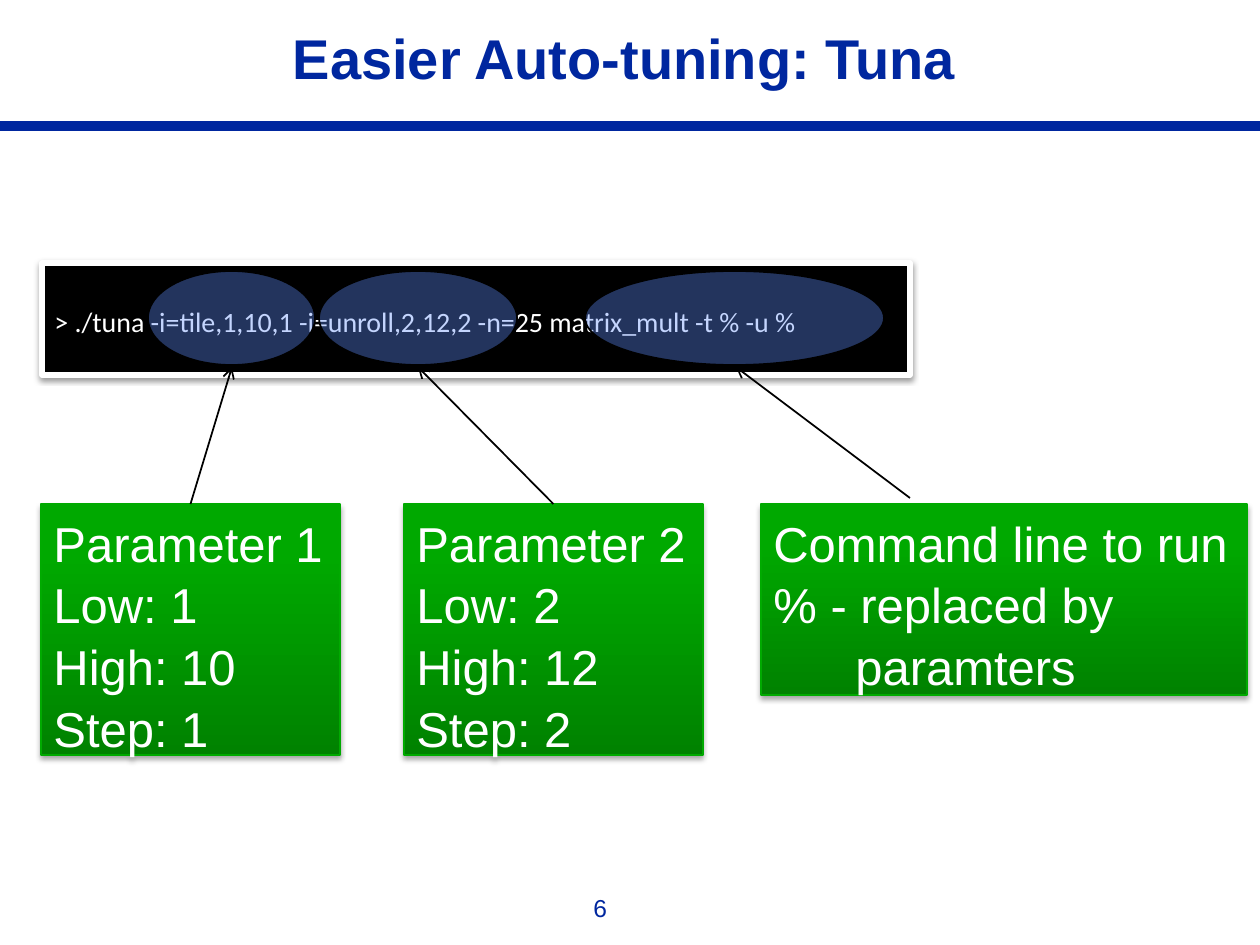
from lxml.etree import SubElement
from pptx import Presentation
from pptx.dml.color import RGBColor
from pptx.enum.shapes import MSO_CONNECTOR as Link, MSO_SHAPE as Shape
from pptx.enum.text import MSO_ANCHOR as Anchor, PP_ALIGN as Align
from pptx.oxml.ns import qn
from pptx.util import Emu, Pt


def px(length):
    return Emu(round(length * 914400 / 126))


def color(code):
    return RGBColor.from_string(code)


class TunaSlide:
    navy, black, white = "00279F", "000000", "FFFFFF"
    green_dark, green, green_edge = "008200", "00A900", "00AA00"
    highlight = "618FFD"
    sans, code_font = "Arial", "Calibri"

    def __init__(self, deck):
        self.slide = deck.slides.add_slide(deck.slide_layouts[5])
        self.shapes = self.slide.shapes

    def set_text(self, frame, lines, size, font, code, bold=False, spacing=1.0, align=Align.LEFT):
        frame.text = "\n".join(lines)
        for paragraph in frame.paragraphs:
            paragraph.alignment = align
            paragraph.line_spacing = spacing
            for run in paragraph.runs:
                run.font.size = Pt(size)
                run.font.name = font
                run.font.bold = bold
                run.font.color.rgb = color(code)

    def outline(self, shape, code, width):
        shape.line.color.rgb = color(code)
        shape.line.width = Pt(width)

    def cast_shadow(self, shape, alpha, distance):
        effects = shape.element.spPr.find(qn("a:effectLst"))
        outer = SubElement(effects, qn("a:outerShdw"), blurRad=str(Pt(3.1)),
                           dist=str(Pt(distance)), dir="5400000", rotWithShape="0")
        shade = SubElement(outer, qn("a:srgbClr"), val=self.black)
        SubElement(shade, qn("a:alpha"), val=str(alpha * 1000))

    def add_block(self, kind, left, top, width, height):
        block = self.shapes.add_shape(kind, px(left), px(top), px(width), px(height))
        block.shadow.inherit = False
        return block

    def title(self, text, left, top, width, height):
        heading = self.shapes.title
        heading.left, heading.top = px(left), px(top)
        heading.width, heading.height = px(width), px(height)
        heading.text_frame.vertical_anchor = Anchor.MIDDLE
        self.set_text(heading.text_frame, [text], 32, self.sans, self.navy,
                      bold=True, spacing=0.85, align=Align.CENTER)

    def page_number(self, text, left, top, width, height):
        number = self.shapes.add_textbox(px(left), px(top), px(width), px(height))
        self.set_text(number.text_frame, [text], 14, self.sans, self.navy)

    def line(self, start, end, code, width):
        line = self.shapes.add_connector(Link.STRAIGHT, *map(px, start + end))
        self.outline(line, code, width)
        SubElement(line.element.spPr, qn("a:effectLst"))
        return line

    def arrow(self, start, end, box=None):
        arrow = self.line(start, end, self.black, 1)
        SubElement(arrow.element.spPr.find(qn("a:ln")), qn("a:tailEnd"), type="arrow")
        if box is not None:
            arrow.begin_connect(box, 0)

    def terminal(self, command, left, top, width, height):
        terminal = self.add_block(Shape.ROUND_2_SAME_RECTANGLE, left, top, width, height)
        terminal.adjustments[0] = 0
        terminal.fill.solid()
        terminal.fill.fore_color.rgb = color(self.black)
        self.outline(terminal, self.white, 3)
        self.cast_shadow(terminal, 38, 1.6)
        frame = terminal.text_frame
        frame.vertical_anchor = Anchor.MIDDLE
        self.set_text(frame, [command], 16, self.code_font, self.white, spacing=1.15)
        frame.paragraphs[0].space_after = Pt(10)

    def highlight_oval(self, left, top, width, height):
        oval = self.add_block(Shape.OVAL, left, top, width, height)
        oval.fill.solid()
        oval.fill.fore_color.rgb = color(self.highlight)
        tint = oval.element.spPr.find(qn("a:solidFill"))[0]
        SubElement(tint, qn("a:alpha"), val="37000")
        self.outline(oval, self.black, 1)

    def explanation(self, lines, left, top, width, height):
        box = self.add_block(Shape.RECTANGLE, left, top, width, height)
        box.fill.gradient()
        box.fill.gradient_angle = 90
        stops = zip(box.fill.gradient_stops, (self.green_dark, self.green), (0, 0.8))
        for stop, code, position in stops:
            stop.color.rgb = color(code)
            stop.position = position
        self.outline(box, self.green_edge, 0.75)
        self.cast_shadow(box, 35, 1.8)
        frame = box.text_frame
        frame.word_wrap = False
        frame.vertical_anchor = Anchor.TOP
        self.set_text(frame, lines, 28, self.sans, self.white, spacing=1.05)
        return box


def main():
    deck = Presentation()
    deck.slide_width, deck.slide_height = px(1260), px(945)
    tuna = TunaSlide(deck)

    tuna.line((1266, 126), (0, 126), tuna.navy, 6.13)
    tuna.page_number("6", 581, 887, 55, 42)
    tuna.title("Easier Auto-tuning: Tuna", 31, 10, 1187, 105)
    tuna.terminal("> ./tuna -i=tile,1,10,1 -i=unroll,2,12,2 -n=25 matrix_mult -t % -u %",
                  42, 263, 868, 112)

    for left, width in ((148, 167), (319, 198), (585, 299)):
        tuna.highlight_oval(left, 271, width, 94)

    parameters = (
        (1, (1, 10, 1), 41, 232),
        (2, (2, 12, 2), 404, 418),
    )
    box_top, box_width, arrow_tip = 504, 299, 367
    for number, limits, left, tip in parameters:
        labels = zip(("Low", "High", "Step"), limits)
        lines = [f"Parameter {number}"] + [f"{label}: {value}" for label, value in labels]
        box = tuna.explanation(lines, left, box_top, box_width, 251)
        tuna.arrow((left + box_width // 2, box_top), (tip, arrow_tip), box)

    command_box = tuna.explanation(
        ["Command line to run", "% - replaced by", "paramters"], 761, box_top, 486, 191)
    command_box.text_frame.paragraphs[2]._p.get_or_add_pPr().set("marL", str(px(82)))
    tuna.arrow((910, 498), (736, arrow_tip))

    deck.save("out.pptx")


if __name__ == "__main__":
    main()
